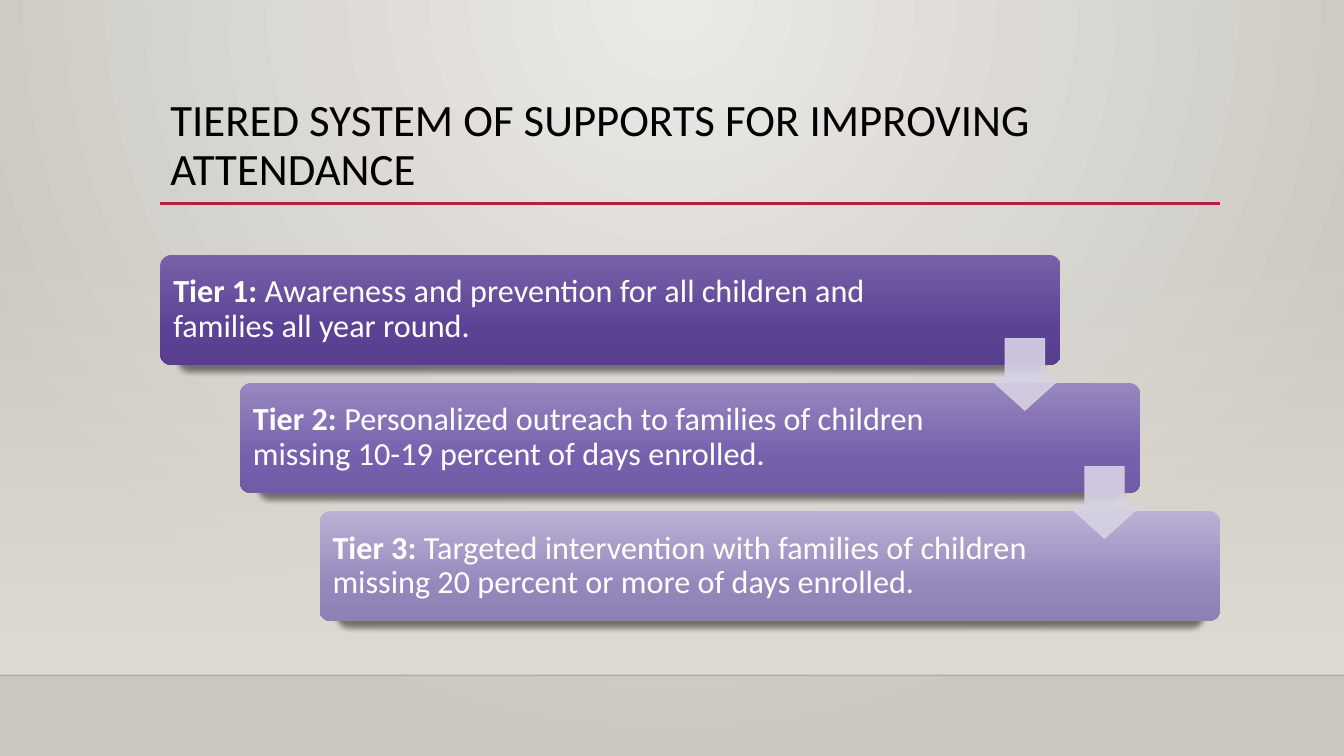
from lxml import etree
from pptx import Presentation
from pptx import util as u
from pptx.dml.color import RGBColor
from pptx.enum import shapes, text
from pptx.oxml import parse_xml
from pptx.oxml.ns import nsdecls, qn

TIERS = [
    ("Tier 1: ", "Awareness and prevention for all children and families all year round.",
     7.75, ("7861A9", "5C4294", "583E8C")),
    ("Tier 2: ", "Personalized outreach to families of children missing 10-19 percent of days enrolled.",
     7.37, ("9887BF", "765FAD", "715BA3")),
    ("Tier 3: ", "Targeted intervention with families of children missing 20 percent or more of days enrolled.",
     7.37, ("BBB1D4", "9587BC", "8E80B2")),
]
LINEAR = '<a:lin ang="5400000" scaled="0"/>'
RADIAL = '<a:path path="circle"><a:fillToRect l="43000" t="0" r="43000" b="100000"/></a:path>'


def color(value):
    return RGBColor.from_string(value)


def set_alpha(parent, percent):
    for swatch in parent.iter(qn("a:srgbClr")):
        etree.SubElement(swatch, qn("a:alpha")).set("val", str(percent * 1000))


def set_gradient(fill, parent, stops, direction=LINEAR):
    fill.solid()
    fill.fore_color.rgb = color(stops[0][1])
    entries = "".join(
        f'<a:gs pos="{position * 1000}"><a:srgbClr val="{value}">'
        f'<a:alpha val="{alpha * 1000}"/></a:srgbClr></a:gs>'
        for position, value, alpha in stops)
    gradient = parse_xml(f'<a:gradFill {nsdecls("a")} rotWithShape="1">'
                         f'<a:gsLst>{entries}</a:gsLst>{direction}</a:gradFill>')
    solid = next(parent.iter(qn("a:solidFill")))
    solid.getparent().replace(solid, gradient)


def add_span(para, words, size=23, value="FFFFFF", bold=False, font="Calibri"):
    span = para.add_run()
    span.text = words
    span.font.name = font
    span.font.size = u.Pt(size)
    span.font.bold = bold
    span.font.color.rgb = color(value)


class TierSlide:
    accent = "B71E42"
    arrow_color = "D7D2E3"

    def __init__(self, deck):
        self.page = deck.slides.add_slide(deck.slide_layouts[5])

    def background(self):
        set_gradient(self.page.background.fill, self.page.element,
                     [(0, "ECEAE7", 100), (100, "CAC7C1", 100)], RADIAL)

    def shape(self, kind, left, top, width, height):
        shape = self.page.shapes.add_shape(
            kind, *map(u.Inches, (left, top, width, height)))
        shape.shadow.inherit = False
        shape.line.fill.background()
        return shape

    def floor(self):
        floor = self.shape(shapes.MSO_SHAPE.RECTANGLE, 0, 2.21, 13.33, 4.49)
        set_gradient(floor.fill, floor.element.spPr,
                     [(0, "DFDBD5", 0), (100, "DFDBD5", 100)])

    def rule(self, start, end, top, value, width, alpha=100):
        line = self.page.shapes.add_connector(
            shapes.MSO_CONNECTOR.STRAIGHT, *map(u.Inches, (start, top, end, top)))
        line.line.color.rgb = color(value)
        line.line.width = u.Pt(width)
        properties = line.element.spPr
        set_alpha(properties, alpha)
        etree.SubElement(properties, qn("a:effectLst"))

    def title(self, words):
        title = self.page.shapes.title
        title.left, title.top, title.width, title.height = map(
            u.Inches, (1.59, 0.88, 10.5, 1.15))
        frame = title.text_frame
        frame.word_wrap = True
        frame.auto_size = text.MSO_AUTO_SIZE.NONE
        frame.vertical_anchor = text.MSO_ANCHOR.MIDDLE
        para = frame.paragraphs[0]
        para.alignment = text.PP_ALIGN.LEFT
        para.line_spacing = 0.9
        add_span(para, words, size=32, value="000000")

    def tier(self, left, top, label, words, text_width, shades):
        bar = self.shape(shapes.MSO_SHAPE.ROUNDED_RECTANGLE, left, top, 8.93, 1.09)
        bar.adjustments[0] = 0.1
        properties = bar.element.spPr
        set_gradient(bar.fill, properties,
                     [(position, shade, 100) for position, shade in zip((0, 69, 100), shades)])
        properties.find(qn("a:effectLst")).append(parse_xml(
            f'<a:outerShdw {nsdecls("a")} blurRad="50800" dist="50800" dir="5400000" '
            'sx="96000" sy="96000" rotWithShape="0"><a:srgbClr val="000000">'
            '<a:alpha val="48000"/></a:srgbClr></a:outerShdw>'))
        box = self.page.shapes.add_textbox(
            *map(u.Inches, (left + 0.03, top + 0.03, text_width, 1.03)))
        frame = box.text_frame
        frame.word_wrap = True
        frame.vertical_anchor = text.MSO_ANCHOR.MIDDLE
        frame.margin_left = frame.margin_right = u.Inches(0.1)
        frame.margin_top = frame.margin_bottom = u.Inches(0.1)
        para = frame.paragraphs[0]
        para.line_spacing = 0.9
        add_span(para, label, bold=True)
        add_span(para, words)

    def arrow(self, left, top):
        arrow = self.shape(shapes.MSO_SHAPE.DOWN_ARROW, left, top, 0.71, 0.71)
        arrow.adjustments[0] = 0.55
        arrow.adjustments[1] = 0.45
        arrow.fill.solid()
        arrow.fill.fore_color.rgb = color(self.arrow_color)
        arrow.line.color.rgb = color(self.arrow_color)
        arrow.line.width = u.Pt(0.75)
        set_alpha(arrow.element.spPr, 90)


def main():
    deck = Presentation()
    deck.slide_width = u.Inches(13.33)
    deck.slide_height = u.Inches(7.5)
    slide = TierSlide(deck)
    slide.background()
    slide.floor()
    slide.rule(0, 13.33, 6.7, "000001", 1, alpha=20)
    slide.rule(1.59, 12.1, 2.02, slide.accent, 2.5)
    slide.title("TIERED SYSTEM OF SUPPORTS FOR IMPROVING ATTENDANCE")
    step_x, step_y = 0.79, 1.27
    for index, tier in enumerate(TIERS):
        slide.tier(1.59 + index * step_x, 2.53 + index * step_y, *tier)
    for index in range(len(TIERS) - 1):
        slide.arrow(9.81 + index * step_x, 3.36 + index * step_y)
    deck.save("out.pptx")


if __name__ == "__main__":
    main()
